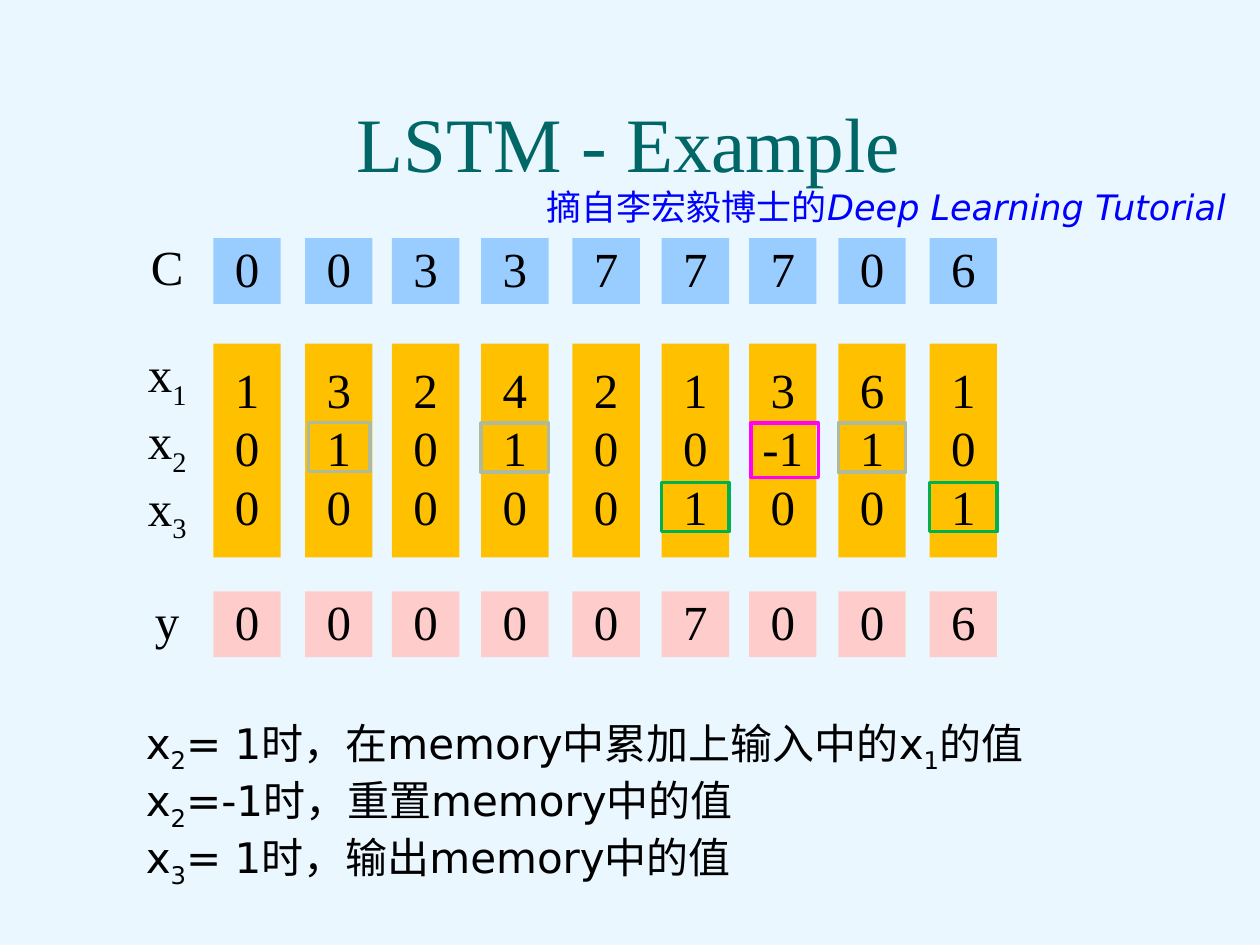
import pptx
import pptx.dml.color
import pptx.enum.shapes
import pptx.enum.text
import pptx.oxml
import pptx.oxml.ns
import pptx.util

Cm = pptx.util.Cm
RGBColor = pptx.dml.color.RGBColor
ALIGN = pptx.enum.text.PP_ALIGN
ANCHOR = pptx.enum.text.MSO_ANCHOR
RECTANGLE = pptx.enum.shapes.MSO_SHAPE.RECTANGLE

BACKGROUND = RGBColor(0xEB, 0xF7, 0xFF)
BLACK = RGBColor(0, 0, 0)
TEAL = RGBColor(0x00, 0x66, 0x66)
BLUE = RGBColor(0x00, 0x00, 0xFF)
MEMORY_BLUE = RGBColor(0x99, 0xCC, 0xFF)
INPUT_ORANGE = RGBColor(0xFF, 0xC0, 0x00)
OUTPUT_PINK = RGBColor(0xFF, 0xCC, 0xCC)
ADD_GRAY = RGBColor(0xAF, 0xB9, 0x9B)
RESET_MAGENTA = RGBColor(0xFF, 0x00, 0xFF)
EMIT_GREEN = RGBColor(0x00, 0xB0, 0x50)


def write_text(shape, lines, size=28, font="Times New Roman", color=BLACK,
               alignment=ALIGN.CENTER, anchor=ANCHOR.MIDDLE, top=0.0, spacing=None):
    frame = shape.text_frame
    frame.word_wrap = True
    frame.vertical_anchor = anchor
    frame.margin_left = frame.margin_right = Cm(0.25)
    frame.margin_top, frame.margin_bottom = Cm(top), Cm(0.13)
    for index, pieces in enumerate(lines):
        paragraph = frame.add_paragraph() if index else frame.paragraphs[0]
        paragraph.alignment = alignment
        paragraph.line_spacing = spacing
        for text, style in pieces:
            run = paragraph.add_run()
            run.text = text
            run.font.size = pptx.util.Pt(size)
            run.font.name = font
            run.font.color.rgb = color
            if style == "italic":
                run.font.italic = True
            properties = run._r.get_or_add_rPr()
            if style == "subscript":
                properties.set("baseline", "-25000")
            east_asian = pptx.oxml.parse_xml(
                f'<a:ea {pptx.oxml.ns.nsdecls("a")} typeface="{font}"/>')
            properties.find(pptx.oxml.ns.qn("a:latin")).addnext(east_asian)


def add_rectangle(shapes, left, top, width, height, fill=None, line=None):
    shape = shapes.add_shape(RECTANGLE, Cm(left), Cm(top), Cm(width), Cm(height))
    shape.shadow.inherit = False
    if fill is None:
        shape.fill.background()
    else:
        shape.fill.solid()
        shape.fill.fore_color.rgb = fill
    if line is None:
        shape.line.fill.background()
    else:
        shape.line.color.rgb = line
        shape.line.width = pptx.util.Pt(2)
    return shape


presentation = pptx.Presentation()
presentation.slide_width = Cm(25.4)
presentation.slide_height = Cm(19.05)
slide = presentation.slides.add_slide(presentation.slide_layouts[5])
slide.background.fill.solid()
slide.background.fill.fore_color.rgb = BACKGROUND

title = slide.shapes.title
title.left, title.top, title.width, title.height = Cm(1.22), Cm(0.28), Cm(22.91), Cm(3.66)
write_text(title, [[("LSTM - Example", "")]], size=44, color=TEAL,
           anchor=ANCHOR.BOTTOM, top=0.13, spacing=0.9)

column_lefts = [4.3, 6.15, 7.9, 9.7, 11.54, 13.34, 15.1, 16.9, 18.74]
cell_width = 1.36
input_labels = [[("x", ""), (digit, "subscript")] for digit in "123"]
rows = [
    ([[("C", "")]], 4.72, 1.4, 4.8, 1.33, MEMORY_BLUE,
     ["0", "0", "3", "3", "7", "7", "7", "0", "6"]),
    (input_labels, 6.86, 4.32, 6.93, 4.31, INPUT_ORANGE,
     ["1 0 0", "3 1 0", "2 0 0", "4 1 0", "2 0 0", "1 0 1", "3 -1 0", "6 1 0", "1 0 1"]),
    ([[("y", "")]], 11.86, 1.4, 11.92, 1.33, OUTPUT_PINK,
     ["0", "0", "0", "0", "0", "7", "0", "0", "6"]),
]
for label, label_top, label_height, cell_top, cell_height, fill, values in rows:
    label_box = slide.shapes.add_textbox(
        Cm(2.69), Cm(label_top), Cm(cell_width), Cm(label_height))
    write_text(label_box, label)
    for left, value in zip(column_lefts, values):
        cell = add_rectangle(slide.shapes, left, cell_top, cell_width, cell_height, fill)
        write_text(cell, [[(number, "")] for number in value.split()])

add_group = slide.shapes.add_group_shape()
add_rectangle(add_group.shapes, 6.22, 8.52, 1.24, 0.99, line=ADD_GRAY)
for column in (3, 7):
    add_rectangle(add_group.shapes, column_lefts[column], 8.53, cell_width, 0.99, line=ADD_GRAY)
add_rectangle(slide.shapes, 15.14, 8.53, cell_width, 1.1, line=RESET_MAGENTA)
emit_group = slide.shapes.add_group_shape()
for column in (5, 8):
    add_rectangle(emit_group.shapes, column_lefts[column], 9.73, cell_width, 0.99, line=EMIT_GREEN)

rules = [
    [("x", ""), ("2", "subscript"), ("= 1时，在memory中累加上输入中的x", ""),
     ("1", "subscript"), ("的值", "")],
    [("x", ""), ("2", "subscript"), ("=-1时，重置memory中的值", "")],
    [("x", ""), ("3", "subscript"), ("= 1时，输出memory中的值", "")],
]
rules_box = slide.shapes.add_textbox(Cm(2.69), Cm(14.33), Cm(23.32), Cm(3.43))
write_text(rules_box, rules, size=24, font="DejaVu Sans",
           alignment=ALIGN.LEFT, anchor=ANCHOR.TOP, top=0.13)

credit_box = slide.shapes.add_textbox(Cm(10.77), Cm(3.61), Cm(14.48), Cm(1.12))
write_text(credit_box, [[("摘自李宏毅博士的", ""), ("Deep Learning Tutorial", "italic")]],
           size=20, font="DejaVu Sans", color=BLUE,
           alignment=ALIGN.LEFT, anchor=ANCHOR.TOP, top=0.13)

presentation.save("out.pptx")
